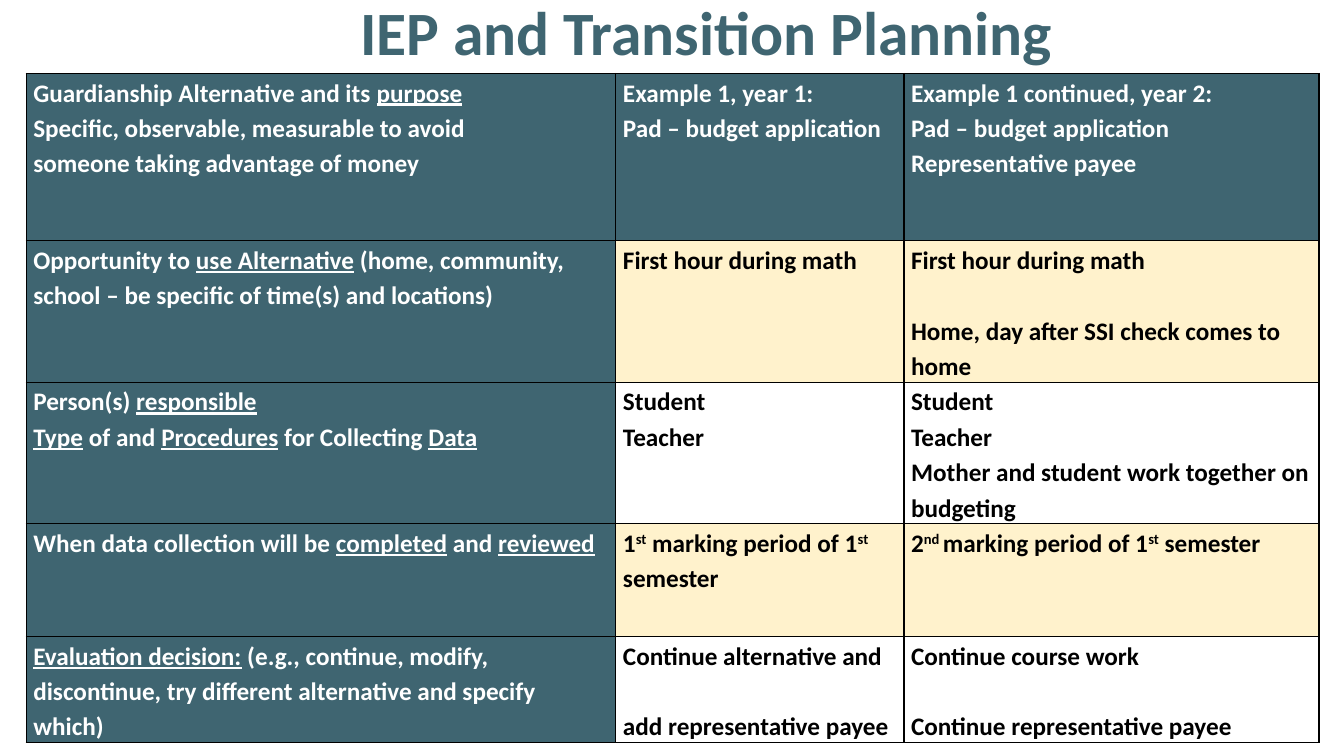
"""Build the IEP and Transition Planning slide."""
import lxml.etree
import pptx
import pptx.dml.color
import pptx.enum.text
import pptx.oxml.ns
import pptx.util

Cm = pptx.util.Cm
Pt = pptx.util.Pt
FONT = "Calibri"
TEAL, CREAM, WHITE, BLACK = "3F6571", "FFF2CC", "FFFFFF", "000000"
COLUMN_WIDTHS = [14.86, 7.26, 10.46]
ROW_HEIGHTS = [4.22, 3.3, 3.25, 2.84, 2.64]
ROWS = [
    [
        "Guardianship Alternative and its _purpose_\n"
        "Specific, observable, measurable to avoid\nsomeone taking advantage of money",
        "Example 1, year 1:\nPad – budget application",
        "Example 1 continued, year 2:\nPad – budget application\nRepresentative payee",
    ],
    [
        "Opportunity to _use Alternative_ (home, community, "
        "school – be specific of time(s) and locations)",
        "First hour during math",
        "First hour during math\n\nHome, day after SSI check comes to home",
    ],
    [
        "Person(s) _responsible_\n_Type_ of and _Procedures_ for Collecting _Data_",
        "Student\nTeacher",
        "Student\nTeacher\nMother and student work together on budgeting",
    ],
    [
        "When data collection will be _completed_ and _reviewed_",
        "1^st^ marking period of 1^st^ semester",
        "2^nd ^marking period of 1^st^ semester",
    ],
    [
        "_Evaluation decision:_ (e.g., continue, modify, discontinue, "
        "try different alternative and specify which)",
        "Continue alternative and\n\nadd representative payee",
        "Continue course work\n\nContinue representative payee",
    ],
]


def rgb(value):
    """Turn a hex string into a colour."""
    return pptx.dml.color.RGBColor.from_string(value)


def style_paragraph(para, size, color, spacing):
    """Set the bold font and line spacing of a paragraph."""
    para.font.name = FONT
    para.font.size = Pt(size)
    para.font.bold = True
    para.font.color.rgb = rgb(color)
    para.line_spacing = spacing


def add_spans(para, text):
    """Add runs, underlining text between _ marks and raising text between ^ marks."""
    for underline_index, chunk in enumerate(text.split("_")):
        for raised_index, piece in enumerate(chunk.split("^")):
            if not piece:
                continue
            span = para.add_run()
            span.text = piece
            if underline_index % 2:
                span.font.underline = True
            if raised_index % 2:
                span.font._element.set("baseline", "30000")


def write_cell(cell, text, color):
    """Write one paragraph per line, with an empty line becoming space before the next."""
    cell.margin_left = cell.margin_right = Cm(0.18)
    cell.margin_top = cell.margin_bottom = 0
    frame = cell.text_frame
    gap = False
    for index, line in enumerate(text.split("\n")):
        if not line:
            gap = True
            continue
        para = frame.add_paragraph() if index else frame.paragraphs[0]
        style_paragraph(para, 18, color, 1.15)
        if gap:
            para.space_before = Pt(25.25)
            gap = False
        add_spans(para, line)


def draw_borders(cell, color):
    """Draw a one-point line on every side of a cell."""
    properties = cell._tc.get_or_add_tcPr()
    name = pptx.oxml.ns.qn
    for side in ("a:lnL", "a:lnR", "a:lnT", "a:lnB"):
        line = lxml.etree.SubElement(properties, name(side), w=str(Pt(1)))
        fill = lxml.etree.SubElement(line, name("a:solidFill"))
        lxml.etree.SubElement(fill, name("a:srgbClr"), val=color)


def add_planning_table(page):
    """Add the table with teal headings and alternating body rows."""
    frame = page.shapes.add_table(
        len(ROWS), len(COLUMN_WIDTHS), Cm(0.66), Cm(1.85),
        Cm(sum(COLUMN_WIDTHS)), Cm(sum(ROW_HEIGHTS)))
    table = frame.table
    table.horz_banding = False
    for column, width in zip(table.columns, COLUMN_WIDTHS):
        column.width = Cm(width)
    for row, height in zip(table.rows, ROW_HEIGHTS):
        row.height = Cm(height)
    for row_index, texts in enumerate(ROWS):
        for column_index, text in enumerate(texts):
            cell = table.cell(row_index, column_index)
            heading = row_index == 0 or column_index == 0
            body_fill = CREAM if row_index % 2 else WHITE
            write_cell(cell, text, WHITE if heading else BLACK)
            draw_borders(cell, BLACK)
            cell.fill.solid()
            cell.fill.fore_color.rgb = rgb(TEAL if heading else body_fill)


def set_title(page, text):
    """Place and format the slide title."""
    title = page.shapes.title
    title.left, title.top = Cm(6.38), Cm(-0.38)
    title.width, title.height = Cm(22.86), Cm(2.54)
    title.text_frame.text = text
    title.text_frame.vertical_anchor = pptx.enum.text.MSO_ANCHOR.MIDDLE
    para = title.text_frame.paragraphs[0]
    para.alignment = pptx.enum.text.PP_ALIGN.CENTER
    style_paragraph(para, 44, TEAL, 0.9)


def main():
    """Build and save the deck."""
    deck = pptx.Presentation()
    deck.slide_width, deck.slide_height = Cm(33.87), Cm(19.05)
    page = deck.slides.add_slide(deck.slide_layouts[5])
    set_title(page, "IEP and Transition Planning")
    add_planning_table(page)
    deck.save("out.pptx")


if __name__ == "__main__":
    main()
